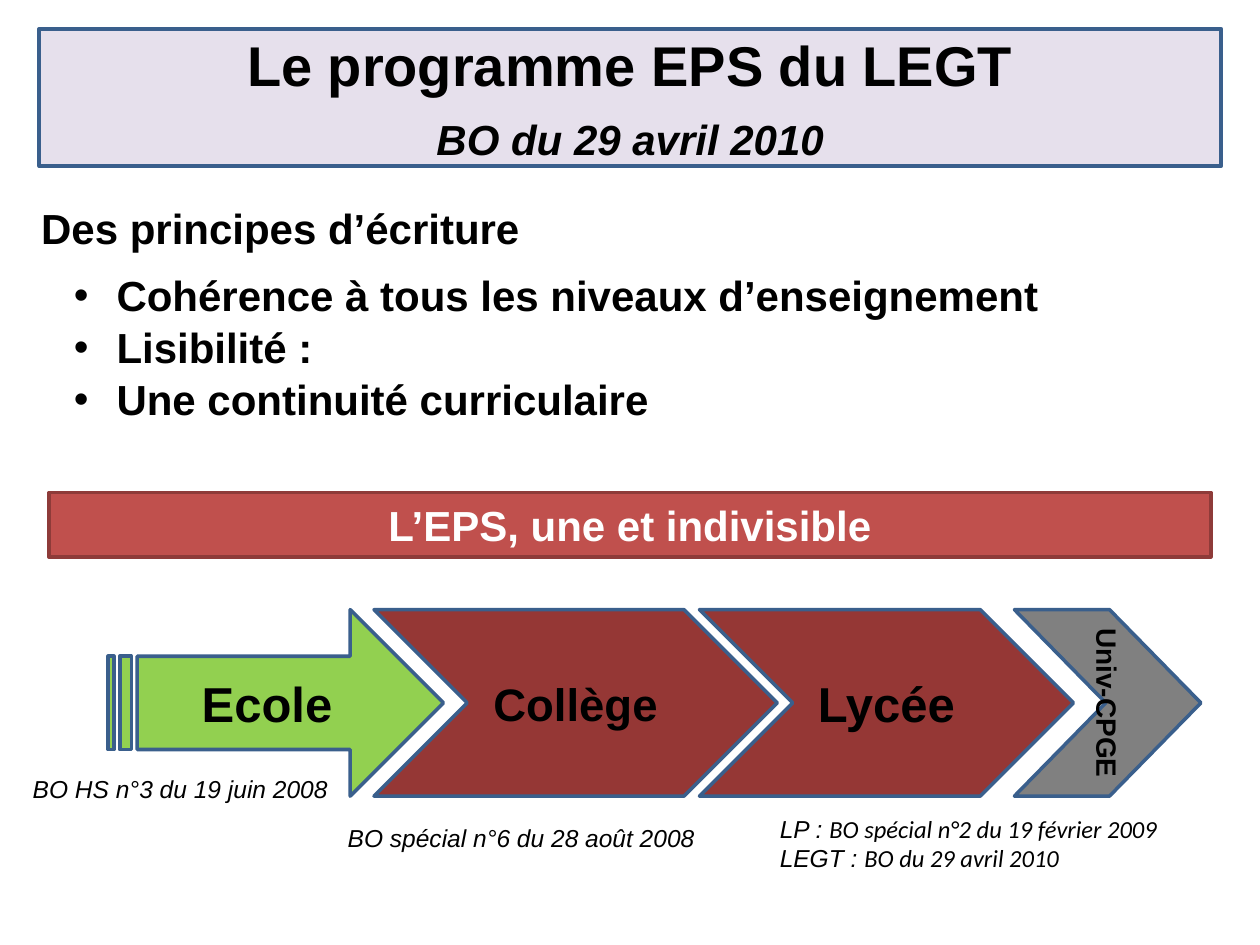
import pptx
import pptx.dml.color
import pptx.enum.shapes
import pptx.enum.text
import pptx.oxml
import pptx.oxml.ns
import pptx.util
from pptx.util import Cm, Pt

COLORS = {
    "black": "000000", "white": "FFFFFF", "lilac": "E6E0EC", "blue": "3A5F8C",
    "red": "C0504D", "dark red": "8E3B39", "maroon": "953735",
    "green": "92D050", "gray": "808080",
}
SHAPES = pptx.enum.shapes.MSO_SHAPE
CENTER = pptx.enum.text.PP_ALIGN.CENTER
MIDDLE = pptx.enum.text.MSO_ANCHOR.MIDDLE
NAMESPACE = pptx.oxml.ns.nsdecls("a")


def write(para, text, size, color="black", align=None, **formats):
    """Append a run of formatted text to the paragraph."""
    para.alignment = align
    span = para.add_run()
    span.text = text
    span.font.color.rgb = pptx.dml.color.RGBColor.from_string(COLORS[color])
    values = {"name": "Arial", "size": Pt(size), "bold": False, "italic": False}
    for name, value in (values | formats).items():
        setattr(span.font, name, value)


def paint(shape, fill, line):
    shape.shadow.inherit = False
    shape.fill.solid()
    shape.fill.fore_color.rgb = pptx.dml.color.RGBColor.from_string(COLORS[fill])
    shape.line.color.rgb = pptx.dml.color.RGBColor.from_string(COLORS[line])
    shape.line.width = Pt(2)
    shape.text_frame.vertical_anchor = MIDDLE
    shape.text_frame.word_wrap = True


deck = pptx.Presentation()
deck.slide_width, deck.slide_height = Cm(25.4), Cm(19.05)
page = deck.slides.add_slide(deck.slide_layouts[5])

# Title in a rounded frame
title = page.shapes.title
place = {"left": Cm(0.79), "top": Cm(0.58), "width": Cm(23.83), "height": Cm(2.77)}
for name, value in place.items():
    setattr(title, name, value)
title._element.spPr.append(pptx.oxml.parse_xml(
    f'<a:prstGeom {NAMESPACE} prst="roundRect"><a:avLst/></a:prstGeom>'))
paint(title, "lilac", "blue")
title.text_frame.auto_size = pptx.enum.text.MSO_AUTO_SIZE.NONE
write(title.text_frame.paragraphs[0], "Le programme EPS du LEGT", 32,
      align=CENTER, bold=True)
subtitle = title.text_frame.add_paragraph()
subtitle.space_before = Pt(9)
write(subtitle, "BO du 29 avril 2010", 24, align=CENTER, bold=True, italic=True)

# Writing principles
box = page.shapes.add_textbox(Cm(0.58), Cm(3.96), Cm(24.41), Cm(4.67))
box.text_frame.word_wrap = True
write(box.text_frame.paragraphs[0], "Des principes d’écriture", 24, bold=True)
principles = ["Cohérence à tous les niveaux d’enseignement", "Lisibilité :",
              "Une continuité curriculaire"]
for index, principle in enumerate(principles):
    para = box.text_frame.add_paragraph()
    para.space_before = Pt(1 if index else 9.5)
    write(para, principle, 24, bold=True)
    properties = para._p.get_or_add_pPr()
    properties.set("marL", str(Cm(1.52)))
    properties.set("indent", str(-Cm(0.86)))
    for bullet in ('buFont {} typeface="Arial"', 'buChar {} char="•"'):
        properties.append(pptx.oxml.parse_xml(f"<a:{bullet.format(NAMESPACE)}/>"))

# Banner
banner = page.shapes.add_shape(SHAPES.RECTANGLE, Cm(0.99), Cm(9.93), Cm(23.42), Cm(1.3))
paint(banner, "red", "dark red")
write(banner.text_frame.paragraphs[0], "L’EPS, une et indivisible", 24, "white",
      align=CENTER, bold=True)

# School stages, from left to right along one band
stages = [
    ("Collège", SHAPES.CHEVRON, 7.54, 8.13, "maroon", 26),
    ("Lycée", SHAPES.CHEVRON, 14.1, 7.54, "maroon", 28),
    ("Ecole", SHAPES.STRIPED_RIGHT_ARROW, 2.18, 6.76, "green", 28),
    ("Univ-CPGE", SHAPES.CHEVRON, 20.45, 3.76, "gray", 16),
]
for name, kind, left, width, fill, size in stages:
    stage = page.shapes.add_shape(kind, Cm(left), Cm(12.29), Cm(width), Cm(3.76))
    paint(stage, fill, "blue")
    write(stage.text_frame.paragraphs[0], name, size, align=CENTER, bold=True)
# The last stage is narrow, so its text runs downwards
stage.adjustments[0] = 0.49
stage.text_frame._txBody.bodyPr.set("vert", "vert")

# Official references under the stages, each line a list of (text, font)
references = [
    (0.41, 15.47, 7.14, 0.86, [[("BO HS n°3 du 19 juin 2008", "Arial")]]),
    (6.76, 16.46, 7.54, 0.86, [[("BO spécial n°6 du 28 août 2008", "Arial")]]),
    (15.47, 16.28, 9.32, 1.45, [
        [("LP : ", "Arial"), ("BO spécial n°2 du 19 février 2009", "Calibri")],
        [("LEGT : ", "Arial"), ("BO du 29 avril 2010", "Calibri")],
    ]),
]
for left, top, width, height, lines in references:
    box = page.shapes.add_textbox(Cm(left), Cm(top), Cm(width), Cm(height))
    box.text_frame.word_wrap = True
    for index, line in enumerate(lines):
        para = box.text_frame.add_paragraph() if index else box.text_frame.paragraphs[0]
        for text, font in line:
            write(para, text, 14, name=font, italic=True)

deck.save("out.pptx")
